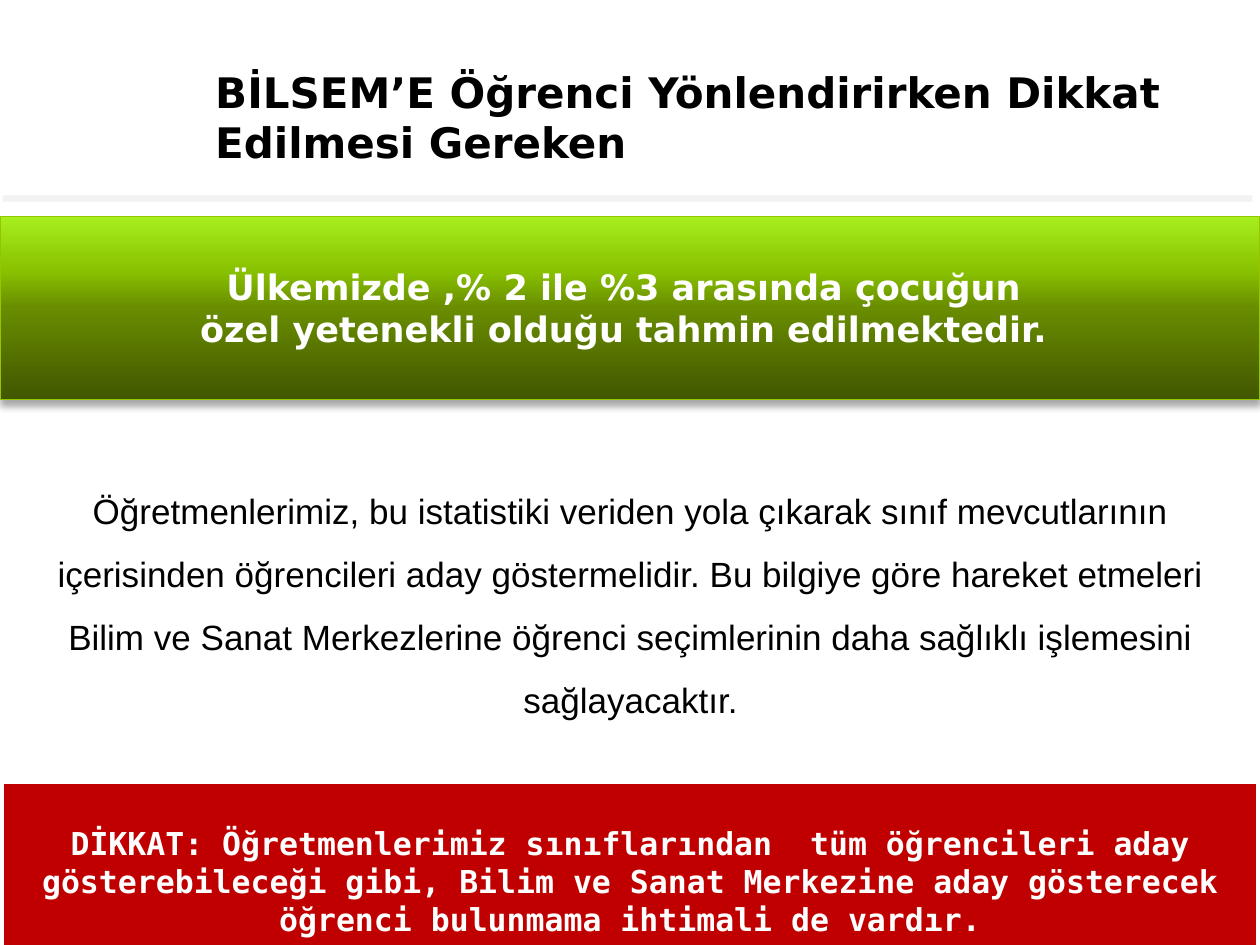
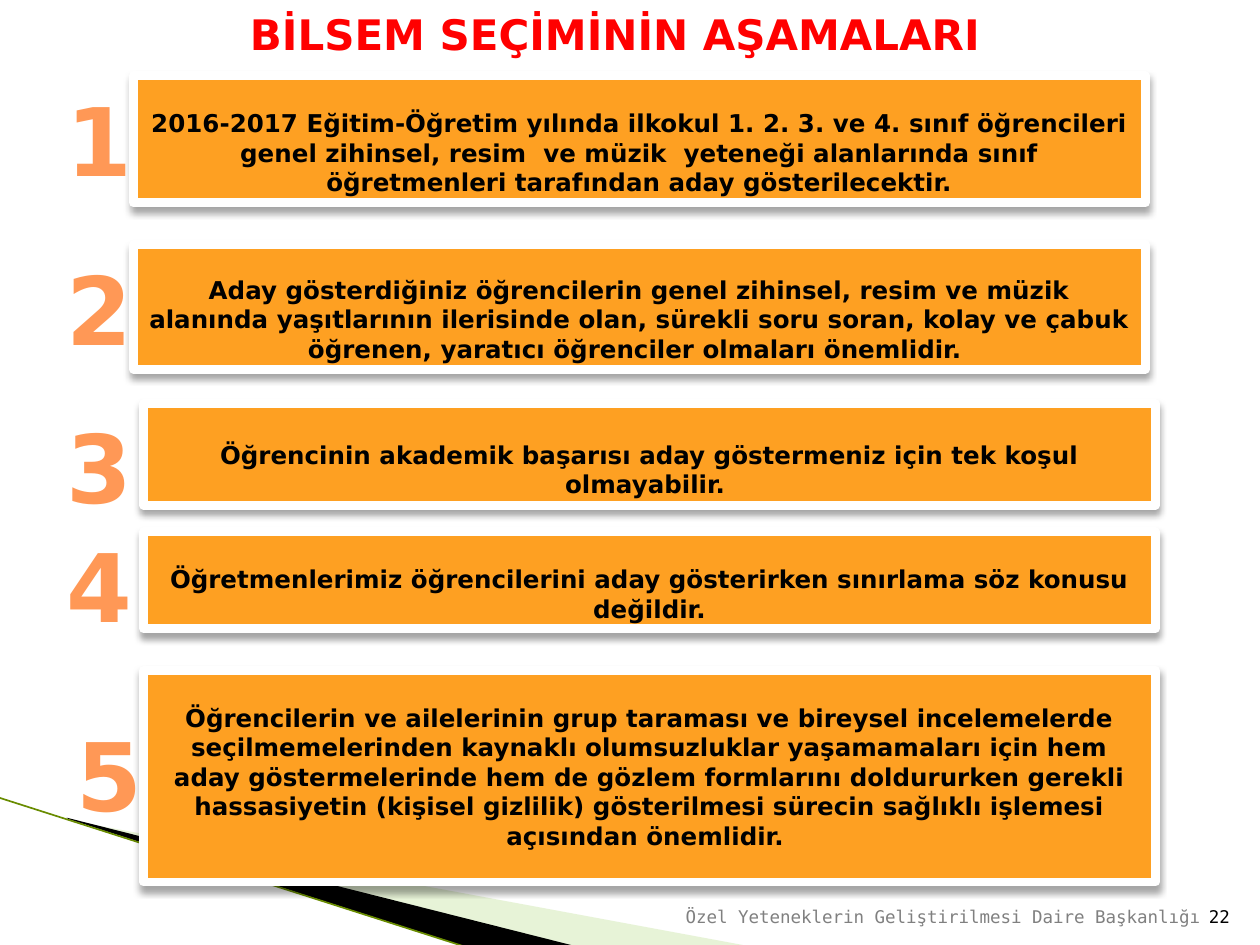
from lxml import etree
from pptx import Presentation
from pptx import util as u
from pptx.dml.color import RGBColor
from pptx.enum import shapes, text
from pptx.oxml.ns import qn

COLORS = {
    "ink": "000000", "white": "FFFFFF", "rule": "F2F2F2", "alert": "C00000",
    "heading": "FF0000", "step": "FEA022", "banner_edge": "94C600",
    "leaf": "C3E19D", "stem": "698C00", "footer": "808080",
}
BANNER_STOPS = [(0, "415700"), (50, "698C00"), (70, "88C100"), (100, "A7EE1D")]
DIGIT_STOPS = [(0, "9D4700"), (78, "FF9856"), (100, "FFF5F1")]
SANS, MONO, BODY = "DejaVu Sans", "DejaVu Sans Mono", "Arial"
CENTER, LEFT, RIGHT = text.PP_ALIGN.CENTER, text.PP_ALIGN.LEFT, text.PP_ALIGN.RIGHT
TOP, MIDDLE, BOTTOM = text.MSO_ANCHOR.TOP, text.MSO_ANCHOR.MIDDLE, text.MSO_ANCHOR.BOTTOM

STEPS = [
    ((1.06, 0.6, 8.03, 1.01), (0.43, 0.6), 0.26,
     "2016-2017 Eğitim-Öğretim yılında ilkokul 1. 2. 3. ve 4. sınıf öğrencileri "
     "genel zihinsel, resim  ve müzik  yeteneği alanlarında sınıf öğretmenleri "
     "tarafından aday gösterilecektir."),
    ((1.06, 1.94, 8.03, 0.99), (0.43, 1.94), 0.24,
     "Aday gösterdiğiniz öğrencilerin genel zihinsel, resim ve müzik alanında "
     "yaşıtlarının ilerisinde olan, sürekli soru soran, kolay ve çabuk öğrenen, "
     "yaratıcı öğrenciler olmaları önemlidir. "),
    ((1.14, 3.2, 8.03, 0.81), (0.43, 3.2), 0.29,
     "Öğrencinin akademik başarısı aday göstermeniz için tek koşul olmayabilir. "),
    ((1.14, 4.22, 8.03, 0.77), (0.43, 4.14), 0.26,
     "Öğretmenlerimiz öğrencilerini aday gösterirken sınırlama söz konusu değildir."),
    ((1.14, 5.32, 8.03, 1.68), (0.51, 5.64), 0.26,
     "Öğrencilerin ve ailelerinin grup taraması ve bireysel incelemelerde "
     "seçilmemelerinden kaynaklı olumsuzluklar yaşamamaları için hem aday "
     "göstermelerinde hem de gözlem formlarını doldururken gerekli hassasiyetin "
     "(kişisel gizlilik) gösterilmesi sürecin sağlıklı işlemesi açısından önemlidir. "),
]


def color(name):
    """Return the palette colour with this name."""
    return RGBColor.from_string(COLORS[name])


def inches(values):
    """Convert numbers to lengths in inches."""
    return [u.Inches(value) for value in values]


def set_gradient(element, fill, stops, angle):
    """Give a fill several gradient stops at a counter-clockwise angle."""
    fill.gradient()
    fill.gradient_angle = angle
    stop_list = next(element.iter(qn("a:gsLst")))
    for old in list(stop_list):
        stop_list.remove(old)
    for position, value in stops:
        stop = etree.SubElement(stop_list, qn("a:gs"), pos=str(position * 1000))
        etree.SubElement(stop, qn("a:srgbClr"), val=value)


def write(shape, lines, size, font, ink="ink", bold=False, align=CENTER,
          anchor=TOP, inset=0.05, spacing=None):
    """Write one paragraph per line and return the runs."""
    frame = shape.text_frame
    frame.word_wrap = True
    frame.vertical_anchor = anchor
    frame.margin_top = u.Inches(inset)
    spans = []
    for index, line in enumerate(lines):
        para = frame.add_paragraph() if index else frame.paragraphs[0]
        para.alignment = align
        if spacing:
            para.line_spacing = spacing
        span = para.add_run()
        span.text = line
        span.font.size = u.Pt(size)
        span.font.name = font
        span.font.bold = bold
        span.font.color.rgb = color(ink)
        spans.append(span)
    return spans


def add_text(page, box, lines, size, font, **style):
    """Add a text box with its text."""
    return write(page.shapes.add_textbox(*inches(box)), lines, size, font, **style)


def add_panel(page, box, fill, edge=None, width=5, shadow=True):
    """Add a rectangle with an optional edge and soft shadow."""
    panel = page.shapes.add_shape(shapes.MSO_SHAPE.RECTANGLE, *inches(box))
    panel.fill.solid()
    panel.fill.fore_color.rgb = color(fill)
    if edge:
        panel.line.color.rgb = color(edge)
        panel.line.width = u.Pt(width)
    else:
        panel.line.fill.background()
    panel.shadow.inherit = False
    if shadow:
        effects = panel._element.spPr.find(qn("a:effectLst"))
        outer = etree.SubElement(effects, qn("a:outerShdw"), blurRad=str(u.Pt(4)),
                                 dist=str(u.Pt(3)), dir="5400000", rotWithShape="0")
        tint = etree.SubElement(outer, qn("a:srgbClr"), val=COLORS["ink"])
        etree.SubElement(tint, qn("a:alpha"), val="35000")
    return panel


def add_blade(page, points, fill, opacity=100):
    """Add a closed pointed outline."""
    corners = [tuple(inches(point)) for point in points]
    builder = page.shapes.build_freeform(*corners[0], scale=1.0)
    builder.add_line_segments(corners[1:], close=True)
    blade = builder.convert_to_shape()
    blade.fill.solid()
    blade.fill.fore_color.rgb = color(fill)
    blade.line.fill.background()
    blade.shadow.inherit = False
    if opacity < 100:
        tint = blade._element.spPr.find(qn("a:solidFill"))[0]
        etree.SubElement(tint, qn("a:alpha"), val=str(opacity * 1000))


def add_corner(page):
    """Draw the pointed leaves in the lower left corner."""
    add_blade(page, [(0.55, 6.51), (5.95, 7.51), (4.56, 7.51), (0.55, 6.5)], "leaf", 40)
    add_blade(page, [(0.53, 6.49), (4.57, 7.51), (3.72, 7.52), (0.54, 6.5)], "ink")
    stem = page.shapes.add_connector(shapes.MSO_CONNECTOR.STRAIGHT,
                                     *inches((-0.01, 6.33, 3.71, 7.52)))
    stem.line.color.rgb = color("stem")
    stem.line.width = u.Pt(0.95)
    etree.SubElement(stem._element.spPr, qn("a:effectLst"))


def add_banner(page, box, lines):
    """Add the green gradient banner."""
    banner = add_panel(page, box, "stem", "banner_edge", 0.75)
    set_gradient(banner._element, banner.fill, BANNER_STOPS, 90)
    write(banner, lines, 20, SANS, ink="white", bold=True, inset=0.39)


def add_step(page, number, box, digit_corner, inset, line):
    """Add an orange step panel and its large number."""
    write(add_panel(page, box, "step", "white"), [line], 14, SANS,
          bold=True, inset=inset)
    digit = add_text(page, (*digit_corner, 0.38, 1.01), [str(number)], 54, SANS,
                     bold=True)[0]
    set_gradient(digit._r, digit.font.fill, DIGIT_STOPS, 270)


def add_footer(page, top, number):
    """Add the department name and the page number."""
    add_text(page, (5.24, top, 4.38, 0.4),
             ["Özel Yeteneklerin Geliştirilmesi Daire Başkanlığı"], 10, MONO,
             ink="footer", align=RIGHT, anchor=BOTTOM)
    add_text(page, (9.46, top, 0.4, 0.4), [number], 10, MONO,
             align=RIGHT, anchor=BOTTOM)


def build_guidance(page):
    """Build the slide on what to consider when nominating pupils."""
    add_text(page, (1.61, 0.3, 8.39, 1.25),
             ["BİLSEM’E Öğrenci Yönlendirirken Dikkat Edilmesi Gereken"], 24, SANS,
             bold=True, align=LEFT, anchor=MIDDLE)
    add_panel(page, (0.02, 1.55, 9.92, 0.05), "rule", shadow=False)
    add_banner(page, (0, 1.72, 10, 1.45),
               ["Ülkemizde ,% 2 ile %3 arasında çocuğun ",
                "özel yetenekli olduğu tahmin edilmektedir. "])
    add_text(page, (0.28, 3.67, 9.45, 2.12),
             ["Öğretmenlerimiz, bu istatistiki veriden yola çıkarak sınıf "
              "mevcutlarının içerisinden öğrencileri aday göstermelidir. Bu bilgiye "
              "göre hareket etmeleri Bilim ve Sanat Merkezlerine öğrenci seçimlerinin "
              "daha sağlıklı işlemesini sağlayacaktır."], 20, BODY, spacing=1.5)
    warning = add_panel(page, (0, 6.19, 10, 1.62), "alert", "white")
    write(warning,
          ["DİKKAT: Öğretmenlerimiz sınıflarından  tüm öğrencileri aday "
           "gösterebileceği gibi, Bilim ve Sanat Merkezine aday gösterecek "
           "öğrenci bulunmama ihtimali de vardır."], 18, MONO,
          ink="white", bold=True, inset=0.35)


def build_stages(page):
    """Build the slide with the numbered selection stages."""
    add_corner(page)
    add_text(page, (1.06, 0.02, 7.64, 0.51), ["BİLSEM SEÇİMİNİN AŞAMALARI"], 24, SANS,
             ink="heading", bold=True)
    for number, step in enumerate(STEPS, 1):
        add_step(page, number, *step)
    add_footer(page, 7.01, "22")


def main():
    """Build and save the deck."""
    deck = Presentation()
    deck.slide_width, deck.slide_height = inches((10, 7.5))
    for build in (build_guidance, build_stages):
        build(deck.slides.add_slide(deck.slide_layouts[6]))
    deck.save("out.pptx")


if __name__ == "__main__":
    main()
